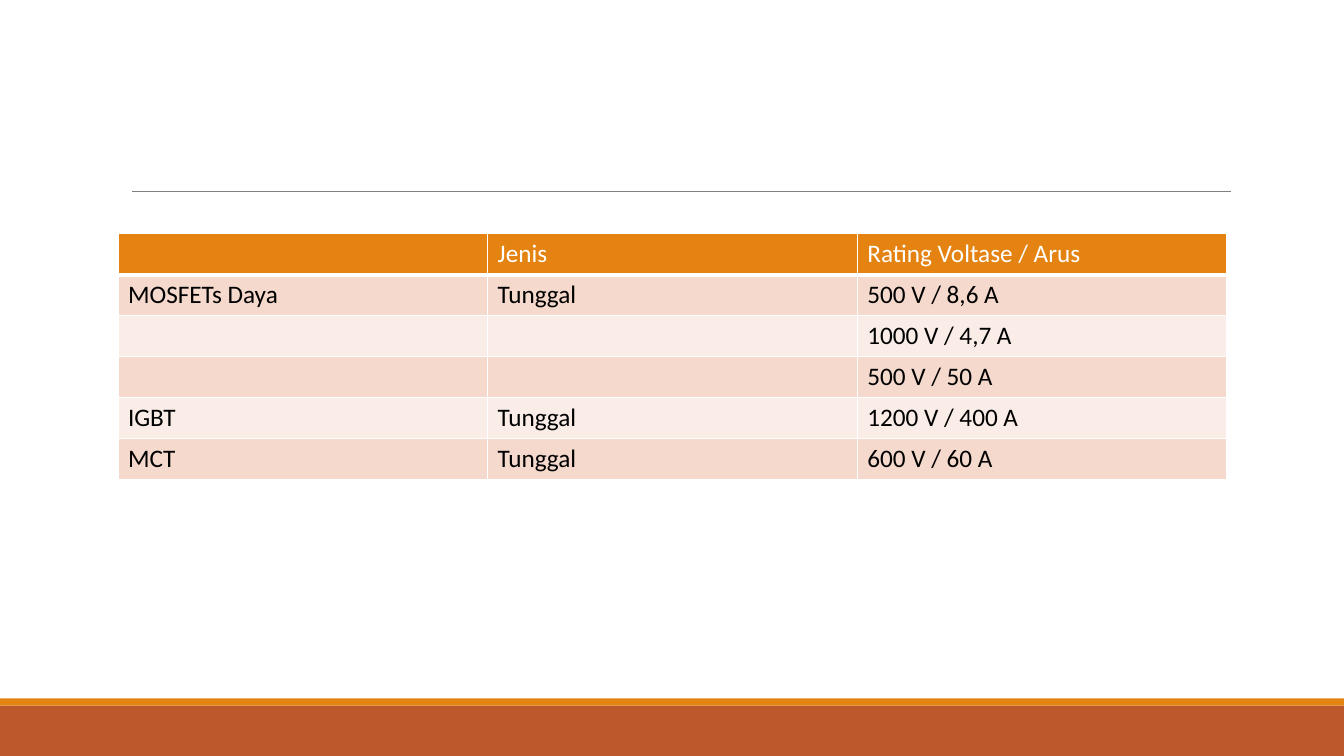
import dataclasses

import lxml.etree
import pptx
import pptx.dml.color
import pptx.enum.shapes
import pptx.oxml.ns
import pptx.util

Inches = pptx.util.Inches
Pt = pptx.util.Pt


@dataclasses.dataclass(frozen=True)
class Theme:
    font: str = "Calibri"
    body_size: float = 18
    orange: str = "E48312"
    rust: str = "BD582C"
    rule: str = "808080"
    rule_width: float = 0.5
    band_dark: str = "F5D9CC"
    band_light: str = "FAEDE7"
    white: str = "FFFFFF"
    black: str = "000000"
    border_width: float = 1
    header_border_width: float = 3


@dataclasses.dataclass(frozen=True)
class Bar:
    top: float
    height: float
    color: str


THEME = Theme()
SLIDE_WIDTH, SLIDE_HEIGHT = 13.33, 7.5
FOOTER_BARS = [Bar(7, 0.5, THEME.rust), Bar(6.93, 0.07, THEME.orange)]
RATINGS = [
    ("", "Jenis", "Rating Voltase / Arus"),
    ("MOSFETs Daya", "Tunggal", "500 V / 8,6 A"),
    ("", "", "1000 V / 4,7 A"),
    ("", "", "500 V / 50 A"),
    ("IGBT", "Tunggal", "1200 V / 400 A"),
    ("MCT", "Tunggal", "600 V / 60 A"),
]


def rgb(color: str) -> pptx.dml.color.RGBColor:
    return pptx.dml.color.RGBColor.from_string(color)


def write_text(tf, text: str, *, color: str, size: float = THEME.body_size,
               font: str = THEME.font) -> None:
    r = tf.paragraphs[0].add_run()
    r.text = text
    r.font.name = font
    r.font.size = Pt(size)
    r.font.color.rgb = rgb(color)


def add_bar(slide, bar: Bar) -> None:
    sp = slide.shapes.add_shape(
        pptx.enum.shapes.MSO_SHAPE.RECTANGLE,
        0, Inches(bar.top), Inches(SLIDE_WIDTH), Inches(bar.height))
    sp.shadow.inherit = False
    sp.fill.solid()
    sp.fill.fore_color.rgb = rgb(bar.color)
    sp.line.fill.background()


def add_title_rule(slide) -> None:
    y = Inches(1.9)
    line = slide.shapes.add_connector(
        pptx.enum.shapes.MSO_CONNECTOR.STRAIGHT, Inches(1.31), y, Inches(12.21), y)
    line.line.color.rgb = rgb(THEME.rule)
    line.line.width = Pt(THEME.rule_width)
    lxml.etree.SubElement(line._element.spPr, pptx.oxml.ns.qn("a:effectLst"))


def set_borders(cell, bottom_width: float) -> None:
    """Draw white borders; call before filling, as fills follow borders in the XML."""
    qn = pptx.oxml.ns.qn
    tc_pr = cell._tc.get_or_add_tcPr()
    for side in ("L", "R", "T", "B"):
        width = bottom_width if side == "B" else THEME.border_width
        ln = lxml.etree.SubElement(tc_pr, qn(f"a:ln{side}"), w=str(Pt(width)))
        fill = lxml.etree.SubElement(ln, qn("a:solidFill"))
        lxml.etree.SubElement(fill, qn("a:srgbClr"), val=THEME.white)


def add_ratings_table(slide) -> None:
    table = slide.shapes.add_table(
        len(RATINGS), len(RATINGS[0]),
        Inches(1.17), Inches(2.32), Inches(11), Inches(2.43)).table
    for i, row in enumerate(RATINGS):
        header = i == 0
        band = THEME.band_dark if i % 2 else THEME.band_light
        for j, text in enumerate(row):
            cell = table.cell(i, j)
            set_borders(cell, THEME.header_border_width if header else THEME.border_width)
            cell.fill.solid()
            cell.fill.fore_color.rgb = rgb(THEME.orange if header else band)
            if text:
                write_text(cell.text_frame, text,
                           color=THEME.white if header else THEME.black)
                cell.text_frame.paragraphs[0].runs[0].font.bold = False


def main() -> None:
    prs = pptx.Presentation()
    prs.slide_width = Inches(SLIDE_WIDTH)
    prs.slide_height = Inches(SLIDE_HEIGHT)
    slide = prs.slides.add_slide(prs.slide_layouts[6])
    for bar in FOOTER_BARS:
        add_bar(slide, bar)
    add_title_rule(slide)
    add_ratings_table(slide)
    prs.save("out.pptx")


if __name__ == "__main__":
    main()
